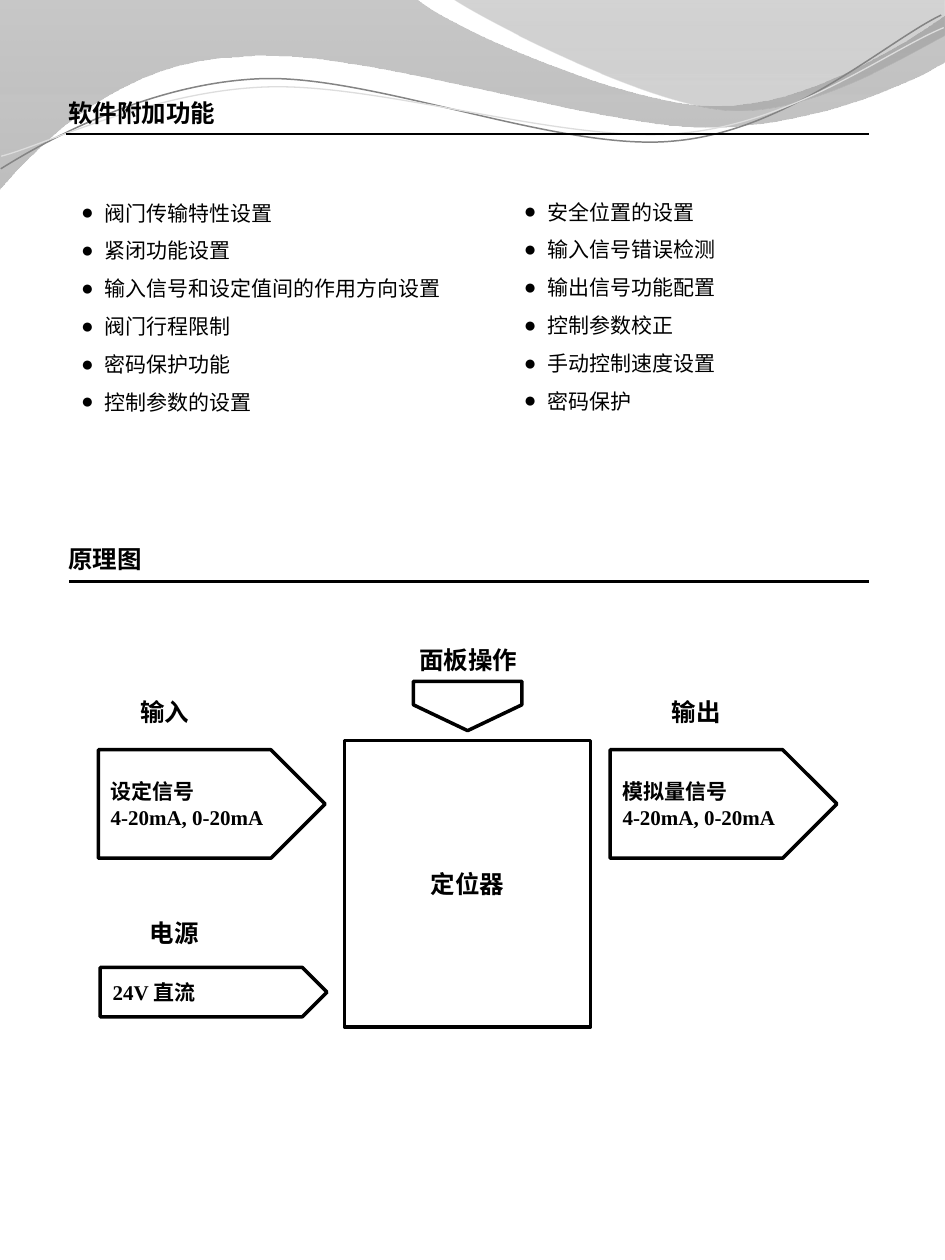
import math
from dataclasses import dataclass
from typing import NamedTuple

from lxml import etree
from pptx import Presentation
from pptx import util as u
from pptx.dml.color import RGBColor
from pptx.enum import shapes, text
from pptx.oxml.ns import qn


@dataclass(frozen=True)
class Theme:
    cjk: str = "Noto Sans CJK SC"
    latin: str = "Times New Roman"
    ink: str = "000000"
    paper: str = "FFFFFF"
    heading: float = 14
    body: float = 12
    leading: float = 1.2
    pair_leading: float = 1.25
    list_pitch: float = 21.6
    indent: float = 13.5
    border: float = 2
    rule: float = 1.5


class Box(NamedTuple):
    x: float
    y: float
    w: float
    h: float


class Stop(NamedTuple):
    position: float
    color: str
    alpha: int


@dataclass(frozen=True)
class Wave:
    segments: list
    stops: tuple = ()
    line: str = ""
    width: float = 0
    tilt: float = 0
    pivot: tuple = (0, 0)


@dataclass(frozen=True)
class Label:
    words: str
    box: Box
    wrap: bool = False


@dataclass(frozen=True)
class Block:
    kind: shapes.MSO_SHAPE
    box: Box
    lines: tuple = ()
    size: float = 12
    align: text.PP_ALIGN = text.PP_ALIGN.LEFT
    rotation: float = 0
    tip: float = 0.5


T = Theme()
RECT, PLATE = shapes.MSO_SHAPE.RECTANGLE, shapes.MSO_SHAPE.PENTAGON

WAVES = [
    Wave([[(0, -0.7)], [(237.6, -0.7)],
          [(257, 15.8), (358.6, 60.5), (409.7, 60.5)],
          [(460.8, 60.5), (517.7, 24.5), (540, 8.6)],
          [(540.7, 34.6)], [(531.4, 41.8), (469.4, 72.7), (402.5, 72.7)],
          [(335.5, 72), (205.9, 26.6), (139, 32.4)],
          [(69.8, 33.8), (24.5, 79.9), (-0.7, 108.7)], [(0, -0.7)]],
         stops=(Stop(0, "848484", 45), Stop(1, "888888", 55))),
    Wave([[(258.5, -0.7)], [(275, 10.8), (367.9, 59), (415.4, 62.6)],
          [(462.2, 66.2), (519.1, 31), (540, 20.2)], [(540, 0)], [(258.5, -0.7)]],
         stops=(Stop(0, "6F6F6F", 30), Stop(0.8, "9D9D9D", 45))),
    Wave([[(0.4, 96.5)], [(25.9, 80.6), (85, 47.5), (149, 45)],
          [(213.1, 42.5), (320.4, 87.1), (385.2, 80.6)],
          [(450.7, 74.9), (506.2, 23.8), (537.8, 8.6)]],
         line="848484", width=0.85, tilt=-2.7, pivot=(269.3, 55.8)),
    Wave([[(0.7, 89.3)], [(25.9, 82.8), (87.8, 51.8), (152.6, 49.7)],
          [(217.4, 47.5), (323.3, 82.1), (387.4, 76.3)],
          [(452.2, 71.3), (507.6, 28.8), (539.3, 15.8)]],
         line="DDDDDD", width=0.75, tilt=-2.7, pivot=(270.4, 56.5)),
]
TITLE = Label("软件附加功能", Box(31.7, 52.2, 130, 24.5), True)
LABELS = [
    Label("原理图", Box(32, 307.4, 160, 24.5), True),
    Label("输入", Box(73, 394.6, 42.5, 24.5)),
    Label("输出", Box(376.6, 394.6, 42.5, 24.5)),
    Label("面板操作", Box(232.4, 365, 71.3, 24.5)),
    Label("电源", Box(78.5, 520.9, 42.5, 24.5)),
]
BLOCKS = [
    Block(RECT, Box(196.9, 423.2, 140.5, 163.6), ("定位器",), T.heading, text.PP_ALIGN.CENTER),
    Block(PLATE, Box(56.2, 428.4, 129.6, 62), ("设定信号", "4-20mA, 0-20mA")),
    Block(PLATE, Box(348.7, 428.4, 129.6, 62), ("模拟量信号", "4-20mA, 0-20mA")),
    Block(PLATE, Box(57.3, 552.8, 129.6, 28.2), ("24V 直流",)),
    Block(PLATE, Box(253.1, 372.4, 28.2, 62), rotation=90, tip=0.523),
]
LISTS = [
    (Box(39.2, 103.7, 242, 160),
     ("阀门传输特性设置", "紧闭功能设置", "输入信号和设定值间的作用方向设置",
      "阀门行程限制", "密码保护功能", "控制参数的设置")),
    (Box(292.3, 103.1, 204.5, 138),
     ("安全位置的设置", "输入信号错误检测", "输出信号功能配置",
      "控制参数校正", "手动控制速度设置", "密码保护")),
]
RULES = [(37.5, 76.5), (39.6, 332.4)]
RULE_END = 496.8


def pts(box: tuple) -> list:
    return [u.Pt(v) for v in box]


def rgb(color: str) -> RGBColor:
    return RGBColor.from_string(color)


def untilt(point: tuple, wave: Wave) -> list:
    a = math.radians(-wave.tilt)
    dx, dy = (v - c for v, c in zip(point, wave.pivot))
    return pts((wave.pivot[0] + dx * math.cos(a) - dy * math.sin(a),
                wave.pivot[1] + dx * math.sin(a) + dy * math.cos(a)))


def bend(sp, segments: list) -> None:
    steps = iter(list(sp._element.iter(qn("a:lnTo"))))
    for seg in segments:
        group = [next(steps) for _ in seg]
        if len(group) == 3:
            curve = etree.Element(qn("a:cubicBezTo"))
            group[0].addprevious(curve)
            for step in group:
                curve.append(step[0])
                step.getparent().remove(step)


def draw_wave(s, wave: Wave) -> None:
    dots = [untilt(point, wave) for seg in wave.segments for point in seg]
    fb = s.shapes.build_freeform(*dots[0], scale=1.0)
    fb.add_line_segments(dots[1:], close=bool(wave.stops))
    sp = fb.convert_to_shape()
    bend(sp, wave.segments[1:])
    sp.rotation = wave.tilt
    sp.shadow.inherit = False
    if not wave.stops:
        sp.fill.background()
        sp.line.color.rgb, sp.line.width = rgb(wave.line), u.Pt(wave.width)
        return
    sp.line.fill.background()
    sp.fill.gradient()
    sp.fill.gradient_angle = 270
    for gs, stop in zip(sp.fill.gradient_stops, wave.stops):
        gs.color.rgb, gs.position = rgb(stop.color), stop.position
    for clr, stop in zip(sp._element.iter(qn("a:srgbClr")), wave.stops):
        etree.SubElement(clr, qn("a:alpha"), val=str(stop.alpha * 1000))


def write(tf, lines: tuple, size: float, pitch: float, bold: bool = True,
          align: text.PP_ALIGN = text.PP_ALIGN.LEFT) -> None:
    for i, line in enumerate(lines):
        p = tf.paragraphs[0] if i == 0 else tf.add_paragraph()
        p.text, p.alignment, p.line_spacing = line, align, u.Pt(pitch)
        f = p.font
        f.size, f.bold, f.color.rgb = u.Pt(size), bold, rgb(T.ink)
        f.name = T.latin if line[0].isdigit() else T.cjk
        latin = p._p.pPr.find(qn("a:defRPr")).find(qn("a:latin"))
        latin.addnext(etree.Element(qn("a:ea"), typeface=T.cjk))


def fill_label(sp, label: Label) -> None:
    sp.left, sp.top, sp.width, sp.height = pts(label.box)
    tf = sp.text_frame
    tf.word_wrap, tf.vertical_anchor = label.wrap, text.MSO_ANCHOR.TOP
    tf.auto_size = text.MSO_AUTO_SIZE.NONE
    write(tf, (label.words,), T.heading, T.heading * T.leading)


def draw_block(s, block: Block) -> None:
    sp = s.shapes.add_shape(block.kind, *pts(block.box))
    sp.shadow.inherit = False
    sp.fill.solid()
    sp.fill.fore_color.rgb = rgb(T.paper)
    sp.line.color.rgb, sp.line.width = rgb(T.ink), u.Pt(T.border)
    sp.rotation = block.rotation
    if block.kind == PLATE:
        sp.adjustments[0] = block.tip
    sp.text_frame.vertical_anchor = text.MSO_ANCHOR.MIDDLE
    leading = T.pair_leading if len(block.lines) > 1 else T.leading
    write(sp.text_frame, block.lines, block.size, block.size * leading, align=block.align)


def draw_list(s, box: Box, items: tuple) -> None:
    tf = s.shapes.add_textbox(*pts(box)).text_frame
    tf.word_wrap = True
    write(tf, items, T.body, T.list_pitch, bold=False)
    for p in tf.paragraphs:
        pPr = p._p.pPr
        pPr.set("marL", str(u.Pt(T.indent)))
        pPr.set("indent", str(-u.Pt(T.indent)))
        rpr = pPr.find(qn("a:defRPr"))
        rpr.addprevious(etree.Element(qn("a:buFont"), typeface=T.latin))
        rpr.addprevious(etree.Element(qn("a:buChar"), char="●"))


def draw_rule(s, x: float, y: float) -> None:
    ln = s.shapes.add_connector(shapes.MSO_CONNECTOR.STRAIGHT, *pts((x, y, RULE_END, y)))
    ln.line.color.rgb, ln.line.width = rgb(T.ink), u.Pt(T.rule)
    etree.SubElement(ln._element.spPr, qn("a:effectLst"))


def main() -> None:
    prs = Presentation()
    prs.slide_width, prs.slide_height = u.Pt(540), u.Pt(720)
    s = prs.slides.add_slide(prs.slide_layouts[5])
    for wave in WAVES:
        draw_wave(s, wave)
    title = s.shapes.title
    title._element.getparent().append(title._element)
    fill_label(title, TITLE)
    for block in BLOCKS:
        draw_block(s, block)
    for label in LABELS:
        fill_label(s.shapes.add_textbox(*pts(label.box)), label)
    for box, items in LISTS:
        draw_list(s, box, items)
    for x, y in RULES:
        draw_rule(s, x, y)
    prs.save("out.pptx")


if __name__ == "__main__":
    main()
